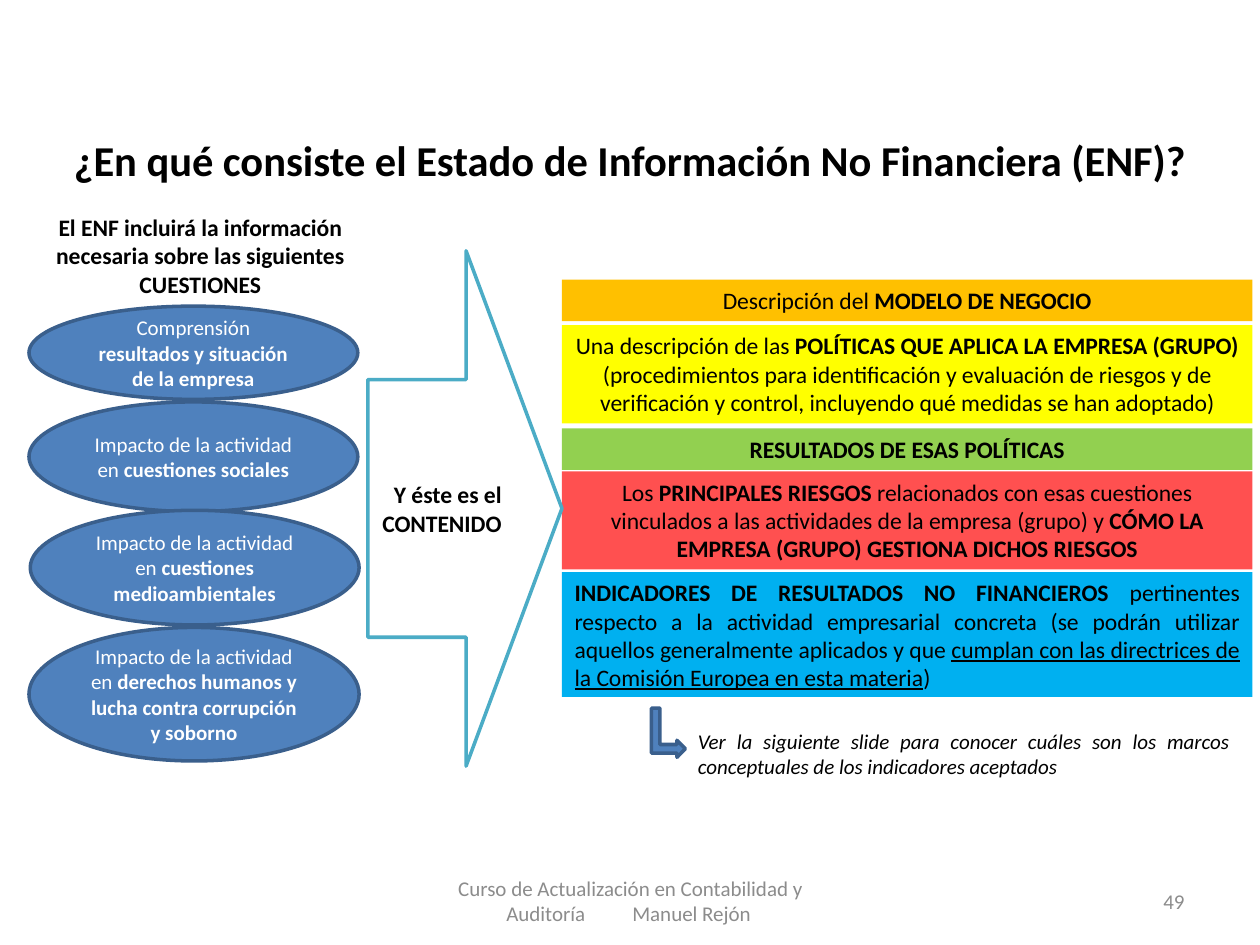
from lxml.etree import SubElement
from pptx import Presentation
from pptx.dml.color import RGBColor
from pptx.enum.shapes import MSO_SHAPE
from pptx.enum.text import MSO_ANCHOR, MSO_AUTO_SIZE, PP_ALIGN
from pptx.oxml.ns import qn
from pptx.util import Inches, Pt


def color(hex_string):
    return RGBColor.from_string(hex_string)


def write(shape, *runs, size=13.5, fill="000000", align=PP_ALIGN.CENTER,
          anchor=MSO_ANCHOR.TOP, tabs=()):
    """Add a paragraph of (text, style) runs; style letters are b, i and u."""
    frame = shape.text_frame
    frame.word_wrap = True
    frame.auto_size = MSO_AUTO_SIZE.NONE
    frame.vertical_anchor = anchor
    paragraph = frame.add_paragraph() if frame.text else frame.paragraphs[0]
    paragraph.alignment = align
    paragraph.space_before = Pt(0)
    properties = paragraph._p.get_or_add_pPr()
    properties.set("marL", "0")
    properties.set("indent", "0")
    SubElement(properties, qn("a:buNone"))
    if tabs:
        tab_list = SubElement(properties, qn("a:tabLst"))
        for position in tabs:
            SubElement(tab_list, qn("a:tab"), pos=str(Inches(position)), algn="l")
    for text, style in runs:
        run = paragraph.add_run()
        run.text = text
        run.font.name = "Calibri"
        run.font.size = Pt(size)
        run.font.bold = "b" in style
        run.font.italic = "i" in style
        run.font.underline = "u" in style
        run.font.color.rgb = color(fill)


presentation = Presentation()
presentation.slide_width = Inches(10)
presentation.slide_height = Inches(7.5)
slide = presentation.slides.add_slide(presentation.slide_layouts[1])
shapes = slide.shapes

# Title
title = shapes.title
title.left, title.top, title.width, title.height = map(Inches, (0, 0.93, 10, 0.68))
write(title, ("¿En qué consiste el Estado de Información No Financiera (ENF)?", "b"),
      size=24.3, anchor=MSO_ANCHOR.MIDDLE)

# Contents of the statement: the last panel is the body placeholder
panel_left, panel_width = 4.46, 5.48
indicators = slide.placeholders[1]
indicators.left, indicators.top, indicators.width, indicators.height = map(
    Inches, (panel_left, 4.54, panel_width, 0.99))
indicators.fill.solid()
indicators.fill.fore_color.rgb = color("00B0F0")
write(indicators,
      ("INDICADORES DE RESULTADOS NO FINANCIEROS ", "b"),
      ("pertinentes respecto a la actividad empresarial concreta (se podrán utilizar "
       "aquellos generalmente aplicados y que ", ""),
      ("cumplan con las directrices de la Comisión Europea en esta materia", "u"),
      (")", ""), align=PP_ALIGN.JUSTIFY)

panels = [
    (2.22, 0.33, "FFC000", [("Descripción del ", ""), ("MODELO DE NEGOCIO", "b")]),
    (2.58, 0.78, "FFFF00", [
        ("Una descripción de las ", ""),
        ("POLÍTICAS QUE APLICA LA EMPRESA (GRUPO) ", "b"),
        ("(procedimientos para identificación y evaluación de riesgos y de "
         "verificación y control, incluyendo qué medidas se han adoptado)", "")]),
    (3.4, 0.33, "92D050", [("RESULTADOS DE ESAS POLÍTICAS", "b")]),
    (3.74, 0.78, "FF5050", [
        ("Los ", ""), ("PRINCIPALES RIESGOS ", "b"),
        ("relacionados con esas cuestiones vinculados a las actividades de la "
         "empresa (grupo) y ", ""),
        ("CÓMO LA EMPRESA (GRUPO) GESTIONA DICHOS RIESGOS", "b")]),
]
for top, height, fill, runs in panels:
    panel = shapes.add_shape(MSO_SHAPE.RECTANGLE, Inches(panel_left), Inches(top),
                             Inches(panel_width), Inches(height))
    panel.shadow.inherit = False
    panel.fill.solid()
    panel.fill.fore_color.rgb = color(fill)
    panel.line.fill.background()
    write(panel, *runs)

# Outlined shapes: topics, content arrow and note arrow
impact = ("Impacto de la actividad en ", "")
topics = [
    (0.23, 2.43, 2.61, 0.74, [("Comprensión ", ""),
                              ("resultados y situación de la empresa", "b")]),
    (0.23, 3.19, 2.61, 0.87, [impact, ("cuestiones sociales", "b")]),
    (0.24, 4.05, 2.61, 0.91, [impact, ("cuestiones medioambientales", "b")]),
    (0.23, 4.98, 2.62, 1.06, [impact, ("derechos humanos y lucha contra corrupción "
                                       "y soborno", "b")]),
]
outlined = []
for *box, runs in topics:
    topic = shapes.add_shape(MSO_SHAPE.OVAL, *map(Inches, box))
    write(topic, *runs, size=12, fill="FFFFFF", anchor=MSO_ANCHOR.MIDDLE)
    outlined.append((topic, "4F81BD", "3A5F8C"))

content_arrow = shapes.add_shape(MSO_SHAPE.RIGHT_ARROW, Inches(2.92), Inches(1.99),
                                 Inches(1.54), Inches(4.09))
content_arrow.adjustments[1] = 0.494
write(content_arrow, ("Y éste es el CONTENIDO", "b"), align=PP_ALIGN.RIGHT,
      anchor=MSO_ANCHOR.MIDDLE)
outlined.append((content_arrow, "FFFFFF", "4BACC6"))

note_arrow = shapes.add_shape(MSO_SHAPE.BENT_UP_ARROW, Inches(5.11), Inches(5.68),
                              Inches(0.39), Inches(0.27))
note_arrow.rotation = 90
outlined.append((note_arrow, "4F81BD", "3A5F8C"))

for shape, fill, line in outlined:
    shape.shadow.inherit = False
    shape.fill.solid()
    shape.fill.fore_color.rgb = color(fill)
    shape.line.color.rgb = color(line)
    shape.line.width = Pt(2)

# Free text
heading = shapes.add_textbox(Inches(0.06), Inches(1.64), Inches(3.06), Inches(0.78))
write(heading, ("El ENF incluirá la información necesaria sobre las siguientes "
                "CUESTIONES", "b"))

note = shapes.add_textbox(Inches(5.44), Inches(5.73), Inches(4.42), Inches(0.5))
write(note, ("Ver la siguiente slide para conocer cuáles son los marcos conceptuales "
             "de los indicadores aceptados", "i"), size=12, align=PP_ALIGN.JUSTIFY)

footer_format = dict(size=12, fill="8C8C8C", anchor=MSO_ANCHOR.MIDDLE)
footer = shapes.add_textbox(Inches(3.42), Inches(6.95), Inches(3.17), Inches(0.4))
write(footer, ("Curso de Actualización en Contabilidad y", ""), **footer_format)
write(footer, ("\tAuditoría\tManuel Rejón", ""), align=PP_ALIGN.LEFT,
      tabs=(0.32, 1.69), **footer_format)

page_number = shapes.add_textbox(Inches(7.17), Inches(6.95), Inches(2.33), Inches(0.4))
write(page_number, ("49", ""), align=PP_ALIGN.RIGHT, **footer_format)

presentation.save("out.pptx")
